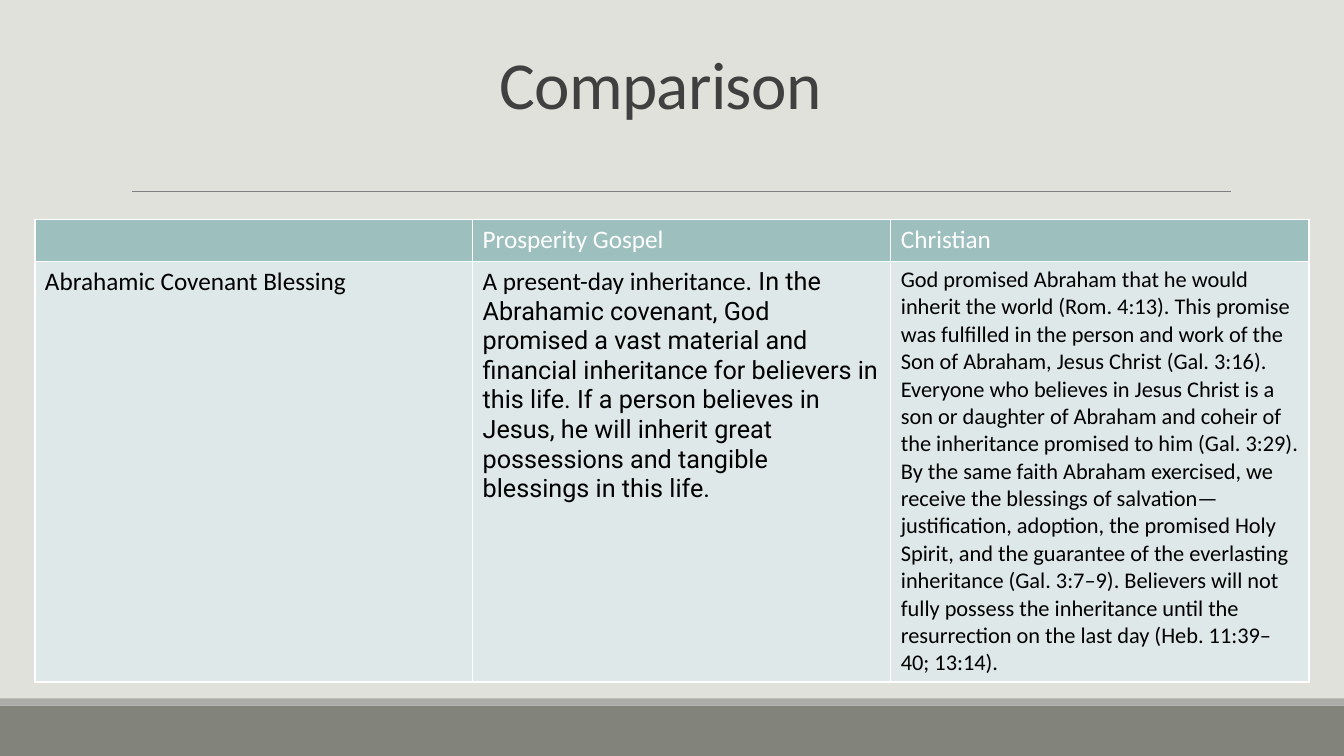
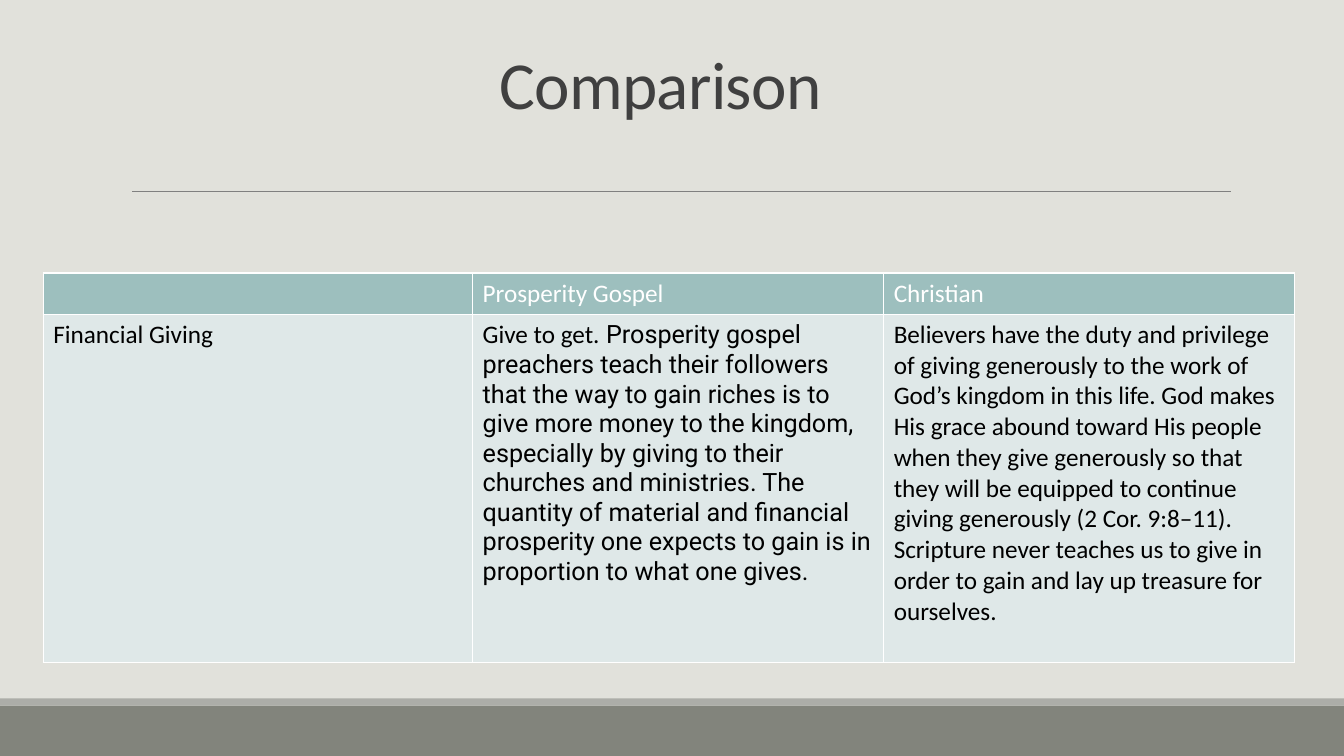
"""Build two comparison slides, each with a title and a three-column table."""
from dataclasses import dataclass

from lxml.etree import SubElement
from pptx import Presentation
from pptx.dml.color import RGBColor
from pptx.enum.shapes import MSO_CONNECTOR, MSO_SHAPE
from pptx.enum.text import MSO_ANCHOR
from pptx.oxml.ns import qn
from pptx.util import Cm, Pt


@dataclass(frozen=True)
class Theme:
    background: str = "E1E1DB"
    band: str = "82847C"
    stripe: str = "ACADA8"
    rule: str = "808080"
    title: str = "404040"
    header: str = "9DBFBE"
    body: str = "DFE8E8"
    white: str = "FFFFFF"
    black: str = "000000"
    font: str = "Calibri"
    detail_font: str = "Roboto"
    title_size: int = 48
    text_size: int = 18
    small_size: int = 16


THEME = Theme()
WIDTH, HEIGHT = 33.87, 19.05
BAND_HEIGHT, STRIPE_HEIGHT = 1.27, 0.18
HEADER_HEIGHT = 1.04
TITLE = "Comparison"
HEADERS = ("", "Prosperity Gospel", "Christian")

COMPARISONS = [
    {
        "topic": "Abrahamic Covenant Blessing",
        "claim": "A present-day inheritance.",
        "detail": " In the Abrahamic covenant, God promised a vast material and "
                  "financial inheritance for believers in this life. If a person "
                  "believes in Jesus, he will inherit great possessions and tangible "
                  "blessings in this life.",
        "answer": "God promised Abraham that he would inherit the world (Rom. 4:13). "
                  "This promise was fulfilled in the person and work of the Son of "
                  "Abraham, Jesus Christ (Gal. 3:16). Everyone who believes in Jesus "
                  "Christ is a son or daughter of Abraham and coheir of the "
                  "inheritance promised to him (Gal. 3:29). By the same faith Abraham "
                  "exercised, we receive the blessings of salvation—justification, "
                  "adoption, the promised Holy Spirit, and the guarantee of the "
                  "everlasting inheritance (Gal. 3:7–9). Believers will not fully "
                  "possess the inheritance until the resurrection on the last day "
                  "(Heb. 11:39–40; 13:14).",
        "answer_size": THEME.small_size,
        "left": 0.88, "top": 5.54, "columns": (11.03, 10.54, 10.54), "row": 10.6,
    },
    {
        "topic": "Financial Giving",
        "claim": "Give to get.",
        "detail": " Prosperity gospel preachers teach their followers that the way to "
                  "gain riches is to give more money to the kingdom, especially by "
                  "giving to their churches and ministries. The quantity of material "
                  "and financial prosperity one expects to gain is in proportion to "
                  "what one gives.",
        "answer": "Believers have the duty and privilege of giving generously to the "
                  "work of God’s kingdom in this life. God makes His grace abound "
                  "toward His people when they give generously so that they will be "
                  "equipped to continue giving generously (2 Cor. 9:8–11). Scripture "
                  "never teaches us to give in order to gain and lay up treasure for "
                  "ourselves.",
        "answer_size": THEME.text_size,
        "left": 1.09, "top": 6.88, "columns": (10.82, 10.36, 10.36), "row": 8.77,
    },
]


def paint(fill, color):
    fill.solid()
    fill.fore_color.rgb = RGBColor.from_string(color)


def add_text(para, text, size=THEME.text_size, color=THEME.black, font=THEME.font):
    span = para.add_run()
    span.text = text
    span.font.size = Pt(size)
    span.font.name = font
    span.font.bold = False
    span.font.color.rgb = RGBColor.from_string(color)
    return span


def add_bar(page, top, height, color):
    bar = page.shapes.add_shape(MSO_SHAPE.RECTANGLE, 0, Cm(top), Cm(WIDTH), Cm(height))
    bar.shadow.inherit = False
    bar.line.fill.background()
    paint(bar.fill, color)


def add_frame(page):
    band_top = HEIGHT - BAND_HEIGHT
    add_bar(page, band_top, BAND_HEIGHT, THEME.band)
    add_bar(page, band_top - STRIPE_HEIGHT, STRIPE_HEIGHT, THEME.stripe)
    rule = page.shapes.add_connector(
        MSO_CONNECTOR.STRAIGHT, Cm(3.33), Cm(4.83), Cm(31.01), Cm(4.83))
    rule.line.color.rgb = RGBColor.from_string(THEME.rule)
    rule.line.width = Pt(0.5)
    SubElement(rule.element.spPr, qn("a:effectLst"))


def add_title(page):
    box = page.shapes.add_textbox(Cm(12.34), Cm(0.81), Cm(10.26), Cm(2.41))
    box.text_frame.word_wrap = True
    box.text_frame.vertical_anchor = MSO_ANCHOR.BOTTOM
    para = box.text_frame.paragraphs[0]
    para.line_spacing = 0.85
    span = add_text(para, TITLE, size=THEME.title_size, color=THEME.title)
    span.font._element.set("spc", "-50") if hasattr(span.font, "_element") else \
        span._r.get_or_add_rPr().set("spc", "-50")


def style_cell(cell, color):
    properties = cell._tc.get_or_add_tcPr()
    for side in ("lnL", "lnR", "lnT", "lnB"):
        border = SubElement(properties, qn(f"a:{side}"), w=str(Pt(1)))
        fill = SubElement(border, qn("a:solidFill"))
        SubElement(fill, qn("a:srgbClr"), val=THEME.white)
    paint(cell.fill, color)


def add_comparison(page, item):
    heights = (HEADER_HEIGHT, item["row"])
    table = page.shapes.add_table(
        len(heights), len(HEADERS), Cm(item["left"]), Cm(item["top"]),
        Cm(sum(item["columns"])), Cm(sum(heights))).table
    for column, width in zip(table.columns, item["columns"]):
        column.width = Cm(width)
    for row, height, color in zip(table.rows, heights, (THEME.header, THEME.body)):
        row.height = Cm(height)
        for cell in row.cells:
            style_cell(cell, color)
    for index, text in enumerate(HEADERS):
        if text:
            add_text(table.cell(0, index).text_frame.paragraphs[0], text,
                     color=THEME.white)
    topic, claim, answer = (
        table.cell(1, index).text_frame.paragraphs[0] for index in range(len(HEADERS)))
    add_text(topic, item["topic"])
    add_text(claim, item["claim"])
    add_text(claim, item["detail"], font=THEME.detail_font)
    add_text(answer, item["answer"], size=item["answer_size"])


def main():
    deck = Presentation()
    deck.slide_width, deck.slide_height = Cm(WIDTH), Cm(HEIGHT)
    paint(deck.slide_master.background.fill, THEME.background)
    for item in COMPARISONS:
        page = deck.slides.add_slide(deck.slide_layouts[6])
        add_frame(page)
        add_comparison(page, item)
        add_title(page)
    deck.save("out.pptx")


if __name__ == "__main__":
    main()
